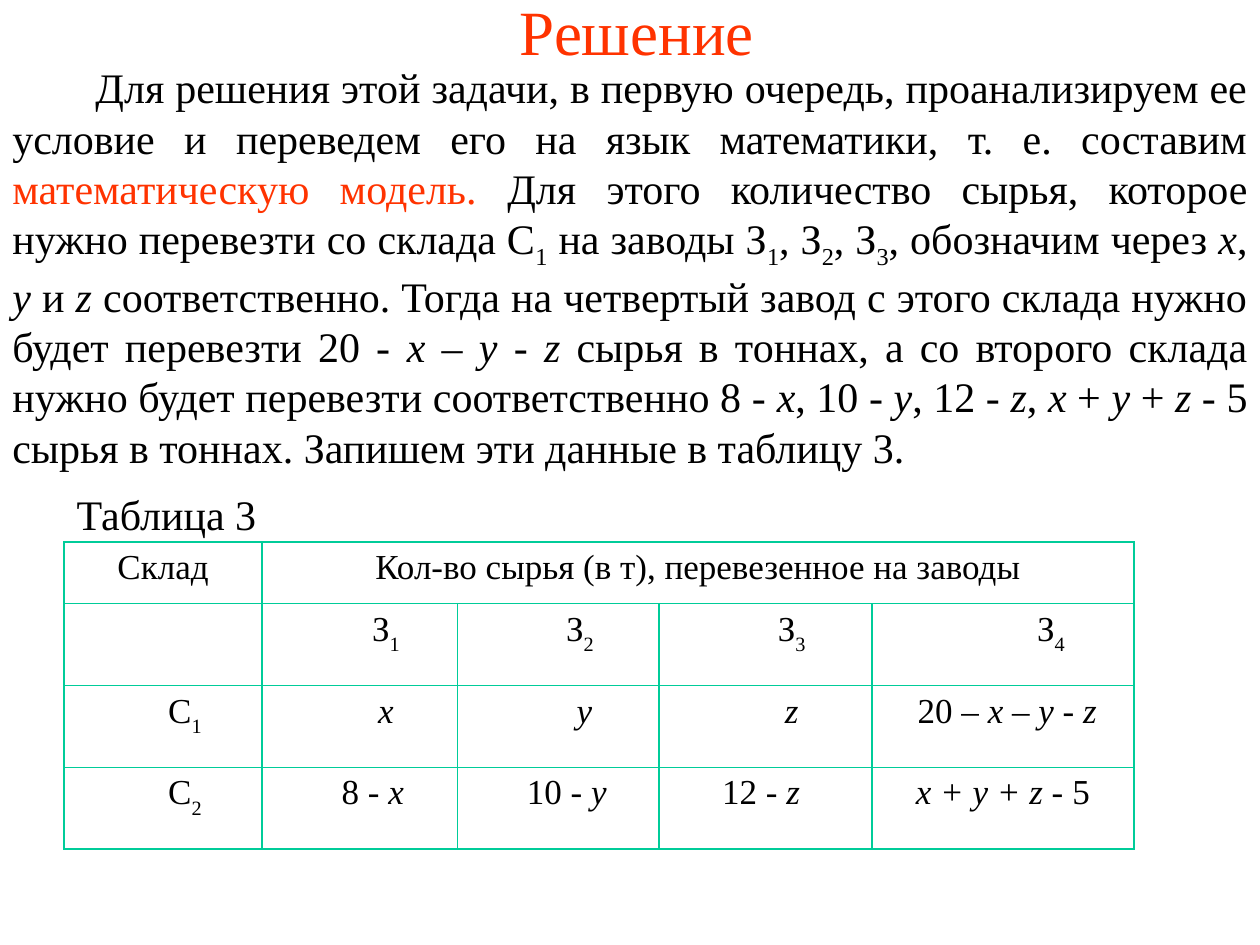
import pptx
import pptx.dml.color
import pptx.enum.text
import pptx.oxml
import pptx.oxml.ns
import pptx.util
from pptx.util import Inches, Pt

FONT = "Times New Roman"
BLACK, RED, GREEN = "000000", "FF3300", "00CC99"
ALIGN = pptx.enum.text.PP_ALIGN
AUTO_SIZE = pptx.enum.text.MSO_AUTO_SIZE
SPACE = Pt(5)  # one step by which a table entry is moved off centre

# *italic*, _subscript_, ~red~
SOLUTION = (
    "Для решения этой задачи, в первую очередь, проанализируем ее условие и "
    "переведем его на язык математики, т. е. составим ~математическую модель. ~"
    "Для этого количество сырья, которое нужно перевезти со склада С_1_ на заводы "
    "З_1_, З_2_, З_3_, обозначим через *x*, *y* и *z* соответственно. Тогда на "
    "четвертый завод с этого склада нужно будет перевезти 20 - *x* – *y *- *z* "
    "сырья в тоннах, а со второго склада нужно будет перевезти соответственно "
    "8 - *x*, 10 - *y*, 12 - *z*, *x* + *y* + *z* - 5 сырья в тоннах. "
    "Запишем эти данные в таблицу 3."
)

COLUMN_WIDTHS = [1.57, 1.55, 1.6, 1.69, 2.08]
ROW_HEIGHTS = [0.49, 0.65, 0.65, 0.65]
# Each entry: text, steps to the right of the centre
ENTRIES = [
    [("Склад", 0), ("Кол-во сырья (в т), перевезенное на заводы", 0)],
    [("", 0), ("З_1_", 6), ("З_2_", 5), ("З_3_", 6), ("З_4_", 11)],
    [("С_1_", 5), ("*x*", 6), ("*y*", 6), ("*z*", 6), ("20 – *x – y - z*", 1)],
    [("С_2_", 5), ("8 - *x*", 3), ("10 - *y*", 2), ("12 - *z*", -1),
     ("*x + y + z - *5", 0)],
]


def rgb(value):
    return pptx.dml.color.RGBColor.from_string(value)


def split_markup(text):
    """Yield (piece, set of active marks) for text with toggling marks."""
    piece, active = "", set()
    for letter in text:
        if letter in "*_~":
            if piece:
                yield piece, set(active)
            piece = ""
            active ^= {letter}
        else:
            piece += letter
    if piece:
        yield piece, active


def write(paragraph, text, size, color=BLACK, align=ALIGN.LEFT, subscript=-25):
    paragraph.alignment = align
    for piece, marks in split_markup(text):
        run = paragraph.add_run()
        run.text = piece
        run.font.name = FONT
        run.font.size = Pt(size)
        run.font.italic = "*" in marks
        run.font.color.rgb = rgb(RED if "~" in marks else color)
        if "_" in marks:
            run.font._element.set("baseline", str(subscript * 1000))


def add_title(slide, text):
    title = slide.shapes.title
    title.left, title.top = Inches(0.43), 0
    title.width, title.height = Inches(9.25), Inches(0.48)
    frame = title.text_frame
    frame.auto_size = AUTO_SIZE.NONE
    frame.vertical_anchor = pptx.enum.text.MSO_ANCHOR.MIDDLE
    write(frame.paragraphs[0], text, 36, RED, ALIGN.CENTER)


def add_text(slide, box, text, align=ALIGN.LEFT, first_indent=0):
    frame = slide.shapes.add_textbox(*map(Inches, box)).text_frame
    frame.word_wrap = True
    frame.auto_size = AUTO_SIZE.SHAPE_TO_FIT_TEXT
    paragraph = frame.paragraphs[0]
    write(paragraph, text, 24, align=align)
    paragraph._p.get_or_add_pPr().set("indent", str(Inches(first_indent)))


def outline_cell(cell):
    properties = cell._tc.get_or_add_tcPr()
    for side in ("lnL", "lnR", "lnT", "lnB"):
        properties.append(pptx.oxml.parse_xml(
            f'<a:{side} {pptx.oxml.ns.nsdecls("a")} w="{Pt(1)}"><a:solidFill>'
            f'<a:srgbClr val="{GREEN}"/></a:solidFill></a:{side}>'))
    cell.fill.background()


def fill_cell(cell, text, steps):
    margin = Inches(0.1)
    cell.margin_left = margin + max(steps, 0) * SPACE
    cell.margin_right = margin + max(-steps, 0) * SPACE
    write(cell.text_frame.paragraphs[0], text, 20, align=ALIGN.CENTER, subscript=-30)


def add_transport_table(slide):
    table = slide.shapes.add_table(
        len(ROW_HEIGHTS), len(COLUMN_WIDTHS), Inches(0.51), Inches(4.3),
        Inches(sum(COLUMN_WIDTHS)), Inches(sum(ROW_HEIGHTS))).table
    table.first_row = table.horz_banding = False
    for column, width in zip(table.columns, COLUMN_WIDTHS):
        column.width = Inches(width)
    for row, height in zip(table.rows, ROW_HEIGHTS):
        row.height = Inches(height)
    for cell in table.iter_cells():
        outline_cell(cell)
    table.cell(0, 1).merge(table.cell(0, len(COLUMN_WIDTHS) - 1))
    for row, entries in enumerate(ENTRIES):
        for column, (text, steps) in enumerate(entries):
            fill_cell(table.cell(row, column), text, steps)


def main():
    deck = pptx.Presentation()
    deck.slide_width, deck.slide_height = Inches(10), Inches(7.5)
    slide = deck.slides.add_slide(deck.slide_layouts[5])
    add_title(slide, "Решение")
    add_text(slide, (0, 0.44, 10, 3.33), SOLUTION, ALIGN.JUSTIFY, 0.66)
    add_transport_table(slide)
    add_text(slide, (0.51, 3.83, 2.76, 0.5), "Таблица 3")
    deck.save("out.pptx")


if __name__ == "__main__":
    main()
